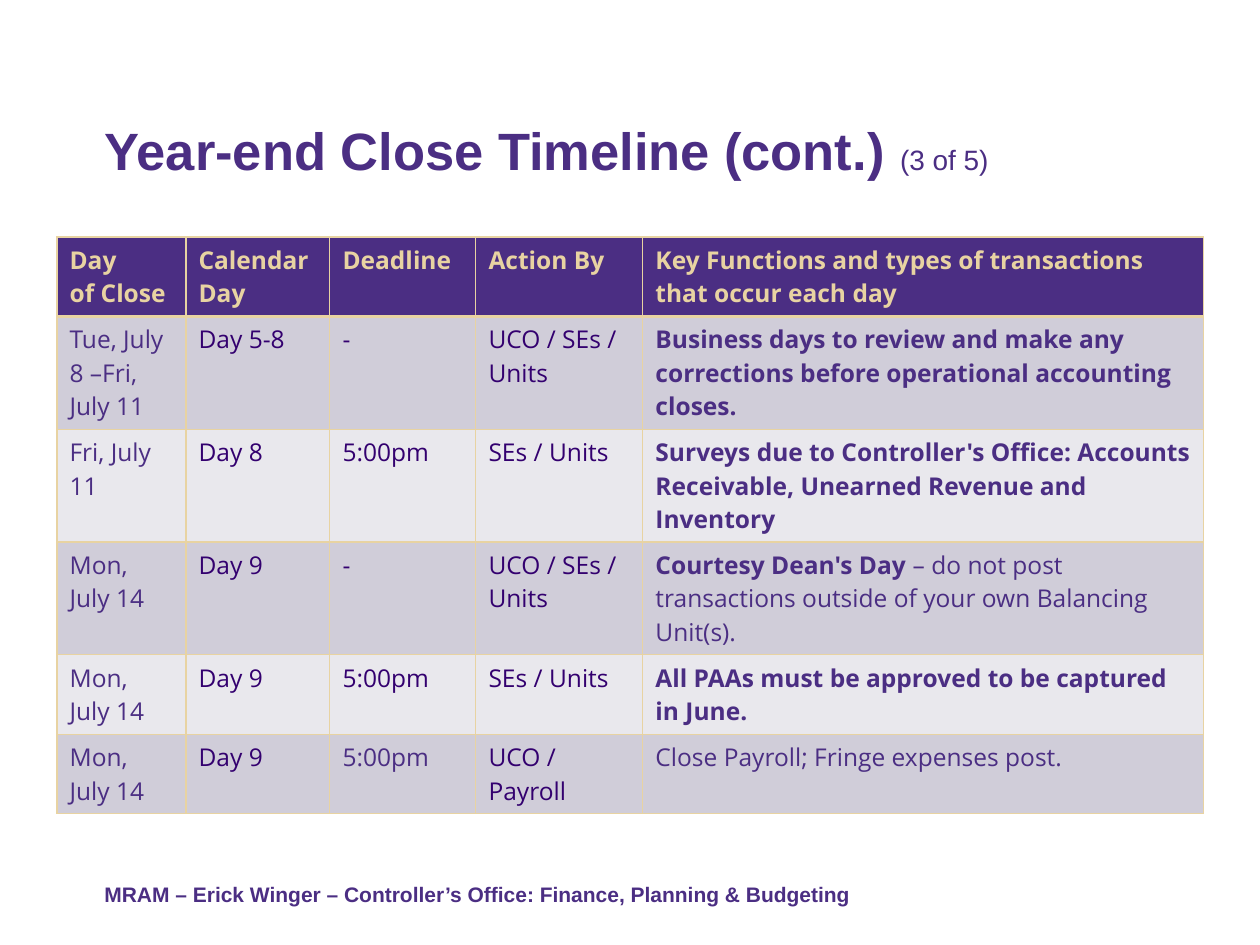
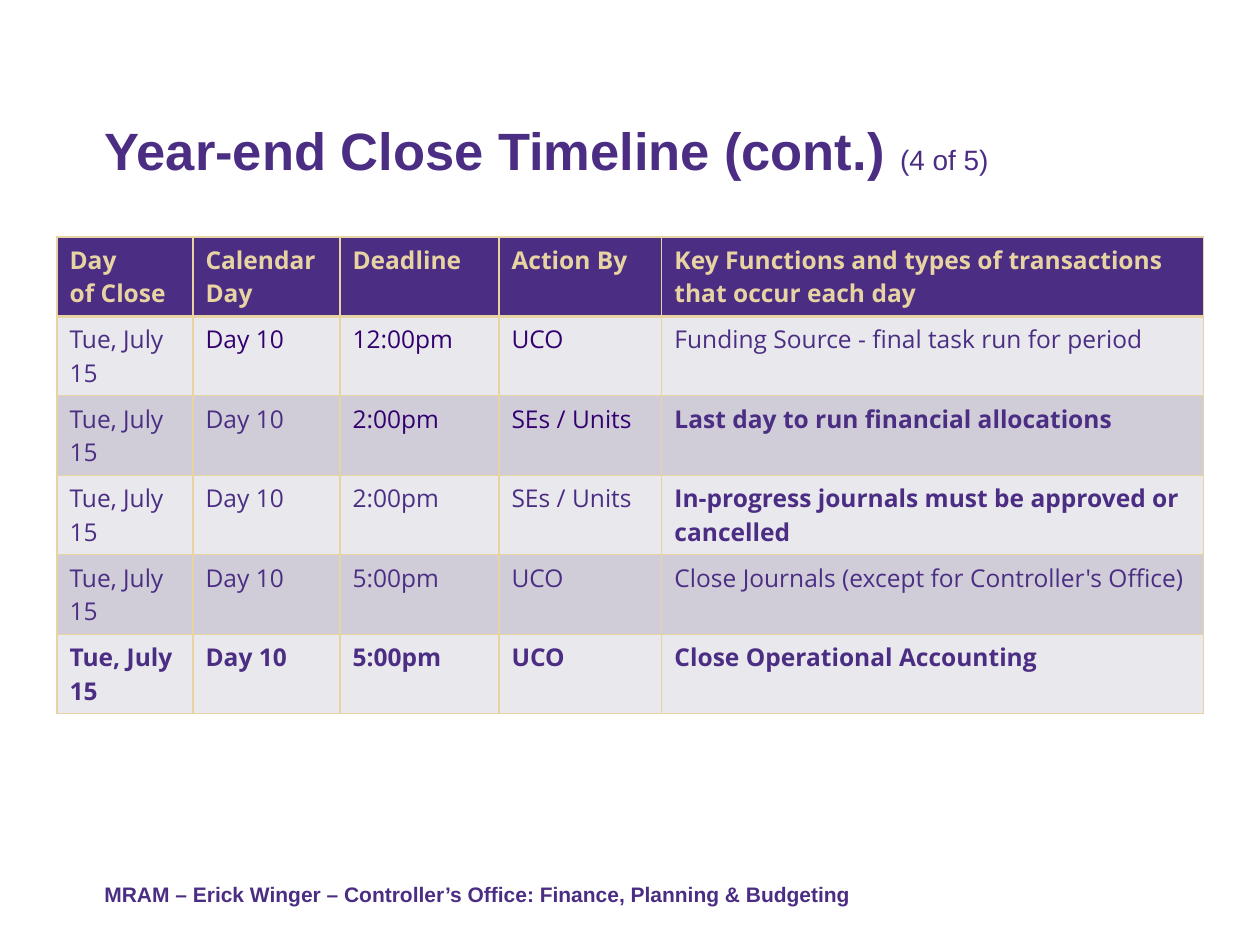
from lxml import etree
from pptx import Presentation
from pptx.dml.color import RGBColor
from pptx.enum.text import MSO_ANCHOR, MSO_AUTO_SIZE, PP_ALIGN
from pptx.oxml.ns import qn
from pptx.util import Emu, Pt

BOTTOM = MSO_ANCHOR.BOTTOM
NO_FIT = MSO_AUTO_SIZE.NONE
LEFT = PP_ALIGN.LEFT

# Shared look: 126 px to the inch
SCALE = 914400 / 126
PURPLE, DARK, GOLD = "4B2E83", "33006F", "E8D3A2"
BANDS = ("D0CDD9", "E9E8ED")
SANS, OPEN = "Arial", "Open Sans"
THIN, THICK = 0.75, 1.9
TITLE = "Year-end Close Timeline (cont.) "
FOOTER = "MRAM – Erick Winger – Controller’s Office: Finance, Planning & Budgeting"

# Cell text: *bold*, ~ for a space that does not break, a new line for a paragraph
HEADS = ("Day of~Close", "Calendar~Day", "Deadline", "Action By",
         "Key Functions and types of~transactions that~occur each day")

# Each row: count of lines, columns in dark purple, cell texts
REVIEW = (
    (3, (1, 2, 3), ("Tue,~July 8 –Fri, July 11", "Day 5-8", "-", "UCO / SEs / Units",
     "*Business days to review and make any corrections before operational "
     "accounting closes.*")),
    (3, (1, 2, 3), ("Fri, July 11", "Day 8", "5:00pm", "SEs / Units",
     "*Surveys due to Controller's Office: Accounts Receivable, Unearned "
     "Revenue and Inventory*")),
    (3, (1, 2, 3), ("Mon, July 14", "Day 9", "-", "UCO / SEs / Units",
     "*Courtesy Dean's Day* – do not post transactions outside of your own "
     "Balancing Unit(s).")),
    (2, (1, 2, 3), ("Mon,~\nJuly 14", "Day 9", "5:00pm", "SEs / Units",
     "*All PAAs must be approved to be captured in June.*")),
    (2, (1, 3), ("Mon, July 14", "Day 9", "5:00pm", "UCO / Payroll",
     "Close Payroll; Fringe expenses post.")),
)
FINAL = (
    (2, (1, 2, 3), ("Tue,~July 15", "Day 10", "12:00pm", "UCO",
     "Funding Source - final task run for period")),
    (2, (2, 3), ("Tue,~July 15", "Day 10", "2:00pm", "SEs / Units",
     "*Last day to run financial allocations*")),
    (2, (), ("Tue,~July 15", "Day 10", "2:00pm", "SEs / Units",
     "*In-progress journals must be approved or cancelled*")),
    (2, (), ("Tue,~July 15", "Day 10", "5:00pm", "UCO",
     "Close Journals (except for Controller's Office)")),
    (2, (), ("*Tue,~July 15*", "*Day 10*", "*5:00pm*", "*UCO*",
     "*Close Operational Accounting*")),
)


def px(n):
    return Emu(round(n * SCALE))


def rgb(code):
    return RGBColor.from_string(code)


def add_run(para, text, size, color=PURPLE, bold=False, face=SANS):
    run = para.add_run()
    run.text = text
    font = run.font
    font.name, font.size, font.bold = face, Pt(size), bold
    font.color.rgb = rgb(color)


def set_frame(shape, gap):
    """Anchor the text of a shape at its bottom left; return its paragraph."""
    frame = shape.text_frame
    frame.word_wrap = True
    frame.auto_size = NO_FIT
    frame.vertical_anchor = BOTTOM
    para = frame.paragraphs[0]
    para.alignment = LEFT
    para.line_spacing = gap
    return para


def add_title(slide, part):
    title = slide.shapes.title
    title.left, title.top, title.width, title.height = map(px, (92, 52, 1128, 136))
    para = set_frame(title, 0.9)
    add_run(para, TITLE, 30, bold=True)
    add_run(para, part, 16)


def add_footer(slide):
    box = slide.shapes.add_textbox(*map(px, (92, 868, 997, 45)))
    add_run(set_frame(box, 1.5), FOOTER, 12, bold=True)


def add_edges(cell, top, base):
    """Draw the gold lines around a cell."""
    props = cell._tc.get_or_add_tcPr()
    for side, width in zip("LRTB", (THIN, THIN, top, base)):
        line = etree.SubElement(props, qn(f"a:ln{side}"), w=str(Pt(width)))
        fill = etree.SubElement(line, qn("a:solidFill"))
        etree.SubElement(fill, qn("a:srgbClr"), val=GOLD)


def fill_cell(cell, text, back, color, top=THIN, base=THIN):
    add_edges(cell, top, base)
    cell.fill.solid()
    cell.fill.fore_color.rgb = rgb(back)
    frame = cell.text_frame
    for i, line in enumerate(text.replace("~", chr(160)).split("\n")):
        para = frame.add_paragraph() if i else frame.paragraphs[0]
        for j, part in enumerate(line.split("*")):
            if part:
                add_run(para, part, 14, color, j % 2 == 1, OPEN)


def add_grid(slide, widths, rows, shift):
    """Add the timeline table; shift picks the band of the first row."""
    highs = [13 + 33 * count for count in (2, *(row[0] for row in rows))]
    frame = slide.shapes.add_table(len(highs), len(widths), px(57), px(237),
                                   px(sum(widths)), px(sum(highs)))
    table = frame.table
    for col, width in zip(table.columns, widths):
        col.width = px(width)
    for row, high in zip(table.rows, highs):
        row.height = px(high)
    # Header row
    for c, text in enumerate(HEADS):
        fill_cell(table.cell(0, c), f"*{text}*", PURPLE, GOLD, base=THICK)
    # Banded rows
    for r, (_, darks, texts) in enumerate(rows):
        back = BANDS[(r + shift) % 2]
        for c, text in enumerate(texts):
            fill_cell(table.cell(r + 1, c), text, back,
                      DARK if c in darks else PURPLE, THIN if r else THICK)


def main():
    deck = Presentation()
    deck.slide_width, deck.slide_height = px(1260), px(945)
    pages = (
        ("(3 of 5)", (129, 144, 146, 167, 561), REVIEW, 0),
        ("(4 of 5)", (136, 147, 159, 163, 542), FINAL, 1),
    )
    for part, widths, rows, shift in pages:
        slide = deck.slides.add_slide(deck.slide_layouts[5])
        add_title(slide, part)
        add_footer(slide)
        add_grid(slide, widths, rows, shift)
    deck.save("out.pptx")


if __name__ == "__main__":
    main()
